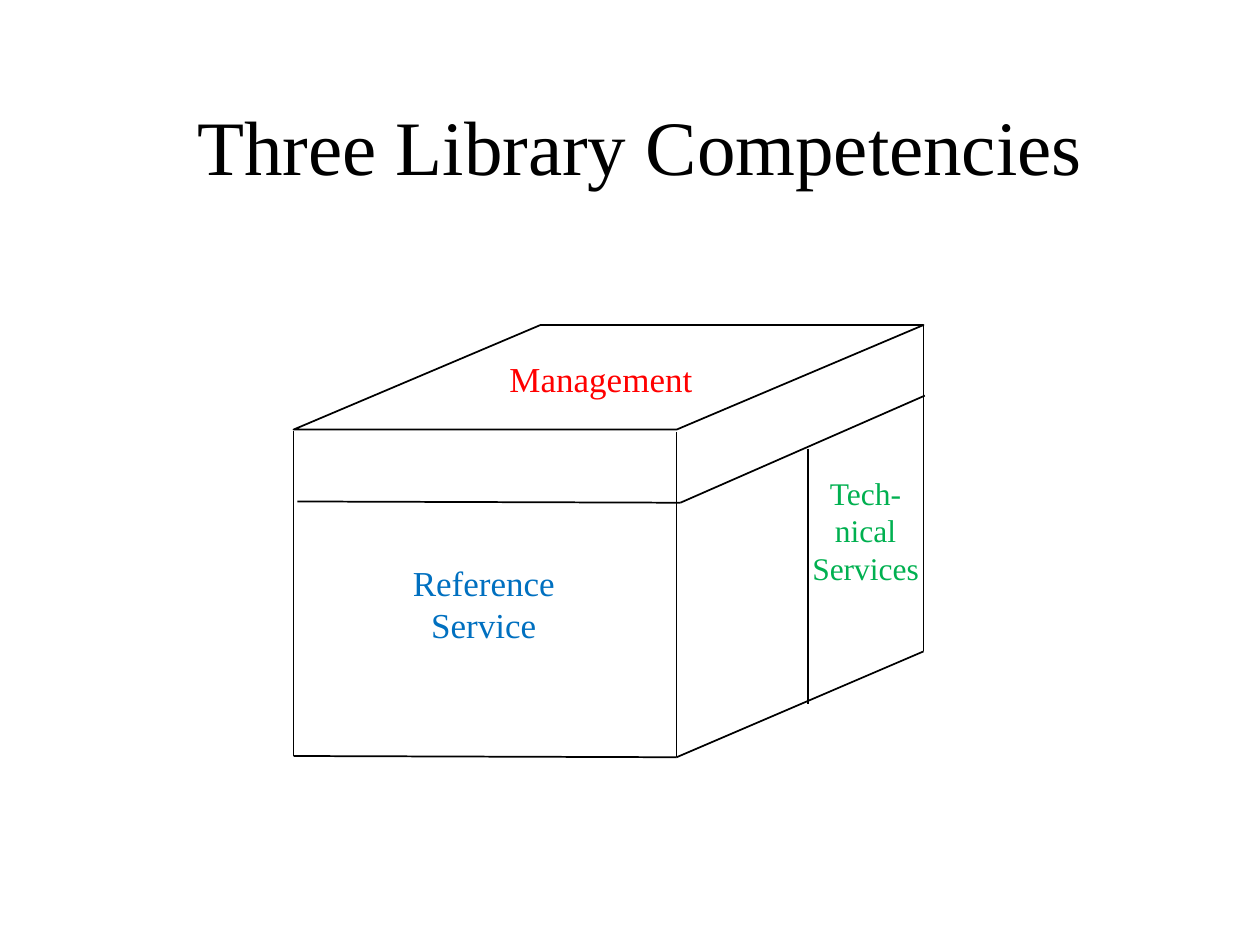
import dataclasses

import pptx
import pptx.dml.color
import pptx.enum.dml
import pptx.enum.shapes
import pptx.enum.text
import pptx.oxml.ns
import pptx.util
from lxml import etree

PX = 9144


@dataclasses.dataclass(frozen=True)
class Theme:
    font: str = "Times New Roman"
    ink: str = "000000"
    paper: str = "FFFFFF"
    management: str = "FF0000"
    reference: str = "0070C0"
    technical: str = "00B050"
    title_size: int = 44
    label_size: int = 20
    small_size: int = 18
    line_width: int = 1


THEME = Theme()


def px(length):
    return pptx.util.Emu(length * PX)


def rgb(value):
    return pptx.dml.color.RGBColor.from_string(value)


def write_text(frame, text, size=THEME.label_size, color=THEME.ink, wrap=True,
               anchor=pptx.enum.text.MSO_ANCHOR.TOP,
               fit=pptx.enum.text.MSO_AUTO_SIZE.SHAPE_TO_FIT_TEXT):
    frame.text = text
    frame.word_wrap = wrap
    frame.auto_size = fit
    frame.vertical_anchor = anchor
    for paragraph in frame.paragraphs:
        paragraph.alignment = pptx.enum.text.PP_ALIGN.CENTER
        for run in paragraph.runs:
            run.font.name = THEME.font
            run.font.size = pptx.util.Pt(size)
            run.font.color.rgb = rgb(color)


def ink_line(line):
    line.color.rgb = rgb(THEME.ink)
    line.width = pptx.util.Pt(THEME.line_width)


def draw_edge(slide, start, end):
    edge = slide.shapes.add_connector(
        pptx.enum.shapes.MSO_CONNECTOR.STRAIGHT, *map(px, start + end))
    ink_line(edge.line)
    etree.SubElement(edge._element.spPr, pptx.oxml.ns.qn("a:effectLst"))


def place_title(slide, box):
    title = slide.shapes.title
    title.left, title.top, title.width, title.height = map(px, box)
    write_text(title.text_frame, "Three Library Competencies",
               size=THEME.title_size,
               anchor=pptx.enum.text.MSO_ANCHOR.MIDDLE,
               fit=pptx.enum.text.MSO_AUTO_SIZE.NONE)


def draw_block(slide, box):
    left, top, width, height = box
    roof_depth = 83
    front_width = 304
    roof = slide.shapes.add_shape(
        pptx.enum.shapes.MSO_SHAPE.PARALLELOGRAM,
        px(left), px(top), px(width), px(roof_depth))
    roof.adjustments[0] = (width - front_width) / roof_depth
    roof.shadow.inherit = False
    roof.fill.solid()
    roof.fill.fore_color.rgb = rgb(THEME.paper)
    ink_line(roof.line)

    edges = (
        ((0, 84), (0, 342)),
        ((width, 0), (width, 259)),
        ((front_width, 85), (front_width, height)),
        ((0, 342), (front_width, height)),
        ((front_width, height), (width, 259)),
        ((3, 140), (307, 141)),
        ((307, 141), (501, 56)),
        ((408, 98), (408, 301)),
    )
    for edge in edges:
        draw_edge(slide, *((left + x, top + y) for x, y in edge))

    labels = (
        ("Tech-nical Services", (397, 113, 114, 101), THEME.small_size,
         THEME.technical, True),
        ("Management", (161, 21, 166, 44), THEME.label_size,
         THEME.management, False),
        ("Reference\nService", (84, 183, 134, 77), THEME.label_size,
         THEME.reference, False),
    )
    for text, (x, y, w, h), size, color, wrap in labels:
        label = slide.shapes.add_textbox(px(left + x), px(top + y), px(w), px(h))
        write_text(label.text_frame, text, size=size, color=color, wrap=wrap)


def main():
    deck = pptx.Presentation()
    deck.slide_width, deck.slide_height = px(1000), px(750)
    slide = deck.slides.add_slide(deck.slide_layouts[5])
    slide.background.fill.solid()
    slide.background.fill.fore_color.rgb = rgb(THEME.paper)
    draw_block(slide, (233, 258, 500, 343))
    place_title(slide, (83, 52, 850, 125))
    deck.save("out.pptx")


if __name__ == "__main__":
    main()
